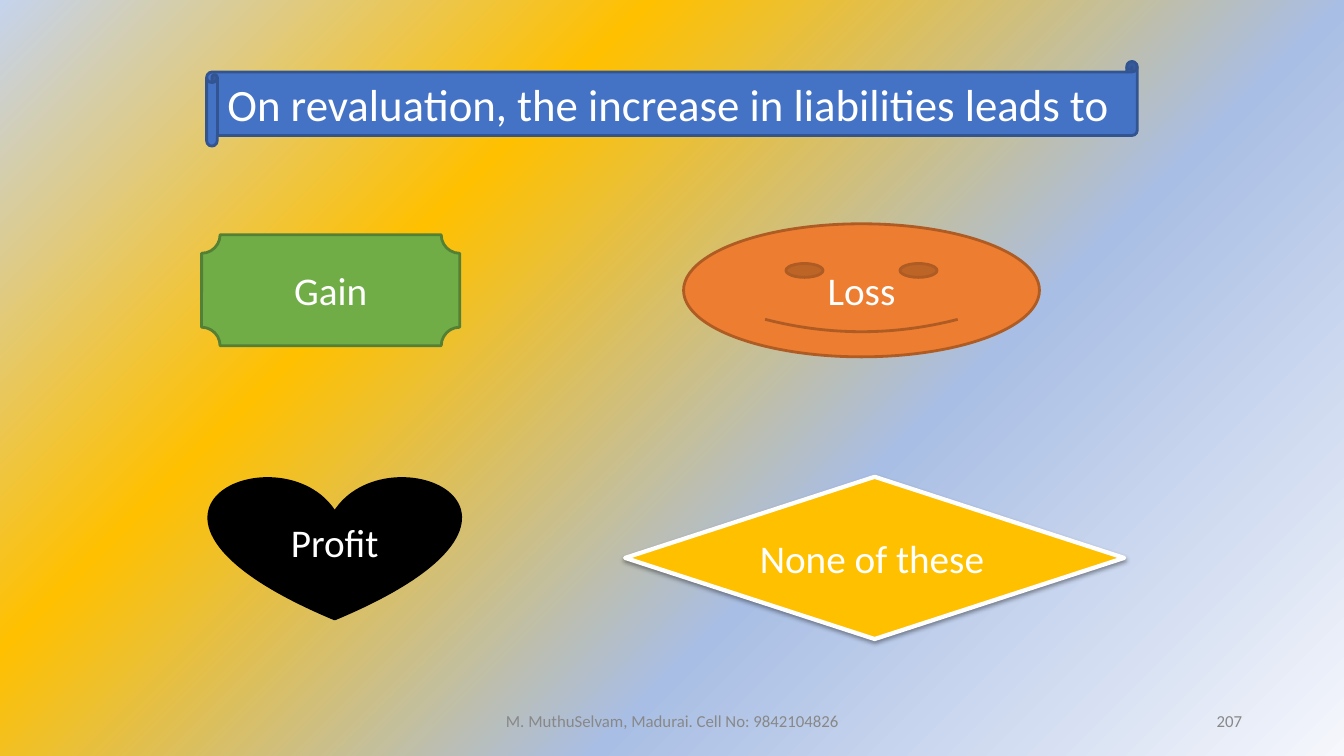
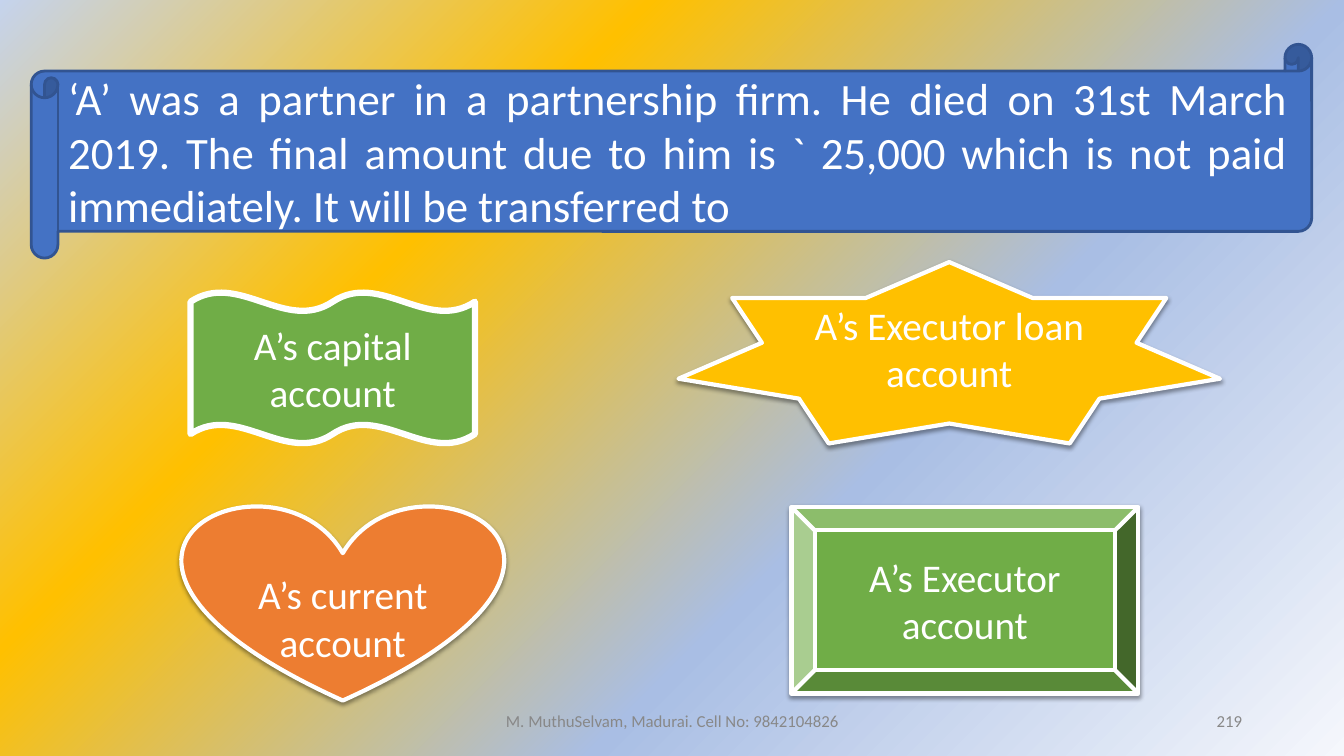
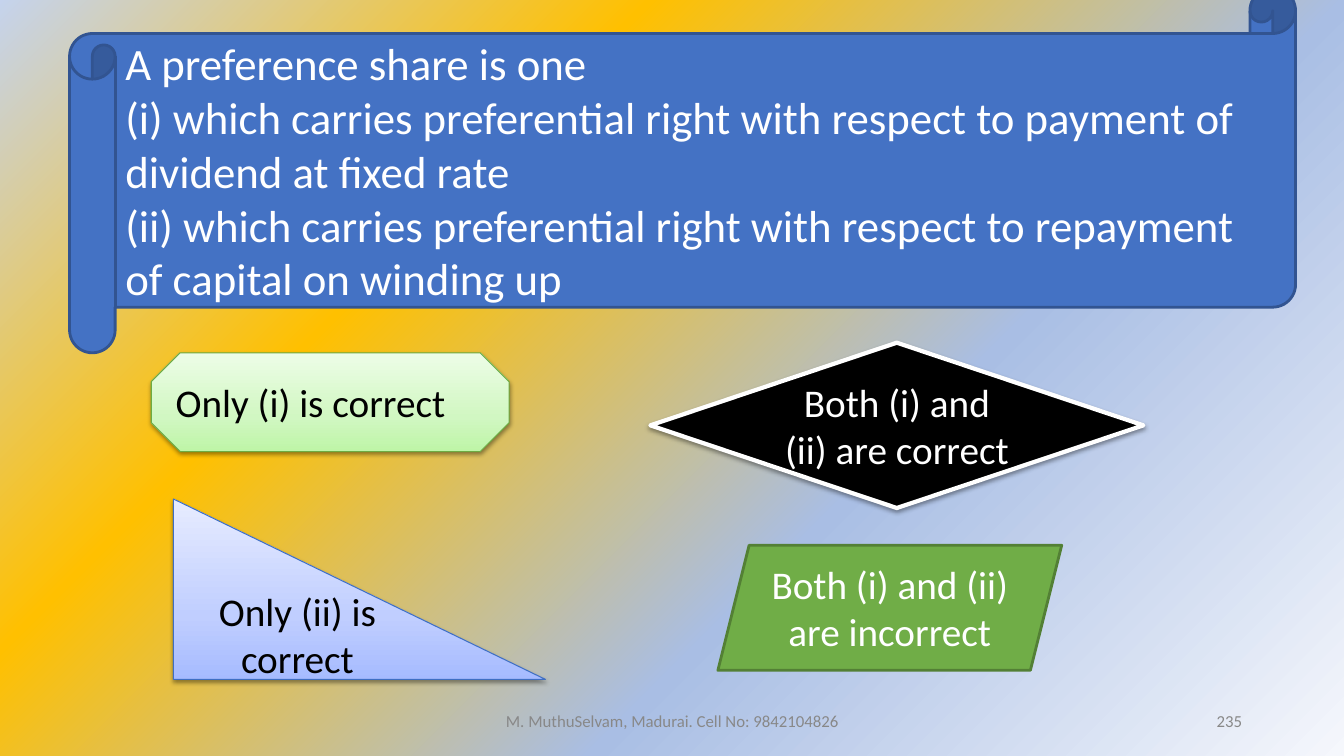
from collections import namedtuple

from lxml import etree
from pptx import Presentation
from pptx.dml.color import RGBColor
from pptx.enum.shapes import MSO_SHAPE
from pptx.enum.text import MSO_ANCHOR, MSO_AUTO_SIZE, PP_ALIGN
from pptx.oxml.ns import nsdecls, qn
from pptx.util import Inches, Pt

SCROLL = MSO_SHAPE.HORIZONTAL_SCROLL
PLAQUE = MSO_SHAPE.PLAQUE
SMILEY = MSO_SHAPE.SMILEY_FACE
HEART = MSO_SHAPE.HEART
DIAMOND = MSO_SHAPE.DIAMOND
STAR = MSO_SHAPE.STAR_7_POINT
BEVEL = MSO_SHAPE.BEVEL
WAVE = MSO_SHAPE.DOUBLE_WAVE
OCTAGON = MSO_SHAPE.OCTAGON
TRIANGLE = MSO_SHAPE.RIGHT_TRIANGLE
PARALLELOGRAM = MSO_SHAPE.PARALLELOGRAM
LEFT, CENTER, RIGHT, JUSTIFY = PP_ALIGN.LEFT, PP_ALIGN.CENTER, PP_ALIGN.RIGHT, PP_ALIGN.JUSTIFY
MIDDLE = MSO_ANCHOR.MIDDLE
NO_FIT = MSO_AUTO_SIZE.NONE

WHITE = RGBColor(0xFF, 0xFF, 0xFF)
BLACK = RGBColor(0, 0, 0)
GRAY = RGBColor(0x88, 0x88, 0x88)
BLUE = RGBColor(0x44, 0x72, 0xC4)
DARK_BLUE = RGBColor(0x32, 0x54, 0x91)
MID_BLUE = RGBColor(0x3F, 0x6F, 0xC3)
GREEN = RGBColor(0x70, 0xAD, 0x47)
DARK_GREEN = RGBColor(0x53, 0x80, 0x35)
MID_GREEN = RGBColor(0x6D, 0xAC, 0x43)
ORANGE = RGBColor(0xED, 0x7D, 0x31)
DARK_ORANGE = RGBColor(0xAF, 0x5C, 0x24)
GOLD = RGBColor(0xFF, 0xC0, 0x00)

BACKDROP = ((0, RGBColor(0xF5, 0xF7, 0xFC)), (36, RGBColor(0xA9, 0xBE, 0xE4)),
            (69, GOLD), (100, RGBColor(0xC5, 0xD3, 0xED)))
PALE_GREEN = ((0, RGBColor(0xBE, 0xF5, 0xA7)), (35, RGBColor(0xD1, 0xF7, 0xC2)),
              (100, RGBColor(0xED, 0xFD, 0xE7)))
PALE_BLUE = ((0, RGBColor(0xA6, 0xBB, 0xFF)), (35, RGBColor(0xC0, 0xCE, 0xFF)),
             (100, RGBColor(0xE7, 0xEC, 0xFF)))
UPWARD = '<a:lin ang="16200000" scaled="1"/>'
FROM_CORNER = ('<a:path path="circle"><a:fillToRect l="100000" t="100000"/></a:path>'
               '<a:tileRect r="-100000" b="-100000"/>')

FONT = "Calibri"
FOOTER = "M. MuthuSelvam, Madurai. Cell No: 9842104826"
SCROLL_CURL = 0.125
SIDE_INSET = 0.1
EDGE_INSET = 0.05

Style = namedtuple("Style", "fill line width shadow ink")
BANNER = Style(BLUE, DARK_BLUE, 2, False, WHITE)
GREEN_FLAT = Style(GREEN, DARK_GREEN, 2, False, WHITE)
ORANGE_FLAT = Style(ORANGE, DARK_ORANGE, 2, False, WHITE)
BLACK_FLAT = Style(BLACK, BLACK, 2, False, WHITE)
GREEN_FRAMED = Style(GREEN, WHITE, 4.5, False, WHITE)
GOLD_RAISED = Style(GOLD, WHITE, 3, True, WHITE)
ORANGE_RAISED = Style(ORANGE, WHITE, 3, True, WHITE)
GREEN_RAISED = Style(GREEN, WHITE, 3, True, WHITE)
BLACK_RAISED = Style(BLACK, WHITE, 3, True, WHITE)
GREEN_SUBTLE = Style(PALE_GREEN, MID_GREEN, 0.75, True, BLACK)
BLUE_SUBTLE = Style(PALE_BLUE, MID_BLUE, 0.75, True, BLACK)

Answer = namedtuple("Answer", "kind at style text align drop", defaults=(CENTER, 0))
Question = namedtuple("Question", "number at lines align answers")

QUESTIONS = (
    Question("207", (2.05, 0.61, 9.23, 0.84),
             ("On revaluation, the increase in liabilities leads to",), LEFT, (
                 Answer(PLAQUE, (2, 2.33, 2.56, 1.1), GREEN_FLAT, "Gain"),
                 Answer(SMILEY, (6.78, 2.22, 3.53, 1.32), ORANGE_FLAT, "Loss"),
                 Answer(HEART, (2.08, 4.73, 2.48, 1.41), BLACK_FLAT, "Profit"),
                 Answer(DIAMOND, (6.2, 4.73, 4.95, 1.61), GOLD_RAISED, "None of these", LEFT),
             )),
    Question("219", (0.31, 0.44, 12.7, 2.12),
             ("‘A’ was a partner in a partnership firm. He died on 31st March 2019. "
              "The final amount due to him is ` 25,000 which is not paid immediately. "
              "It will be transferred to",), JUSTIFY, (
                 Answer(HEART, (1.81, 5, 3.18, 1.95), ORANGE_RAISED,
                        "A’s current account", drop=0.47),
                 Answer(STAR, (6.73, 2.6, 5.37, 1.8), GOLD_RAISED, "A’s Executor loan account"),
                 Answer(BEVEL, (7.85, 5.03, 3.44, 1.85), GREEN_RAISED, "A’s Executor account"),
                 Answer(WAVE, (1.89, 2.9, 2.82, 1.5), GREEN_FRAMED, "A’s capital account"),
             )),
    Question("235", (0.69, -0.12, 12.16, 3.62),
             ("A preference share is one",
              "(i) which carries preferential right with respect to payment of "
              "dividend at fixed rate",
              "(ii) which carries preferential right with respect to repayment "
              "of capital on winding up"), LEFT, (
                 Answer(OCTAGON, (1.5, 3.5, 3.55, 0.98), GREEN_SUBTLE,
                        "Only (i) is correct", LEFT),
                 Answer(DIAMOND, (6.45, 3.4, 4.89, 1.64), BLACK_RAISED,
                        "Both (i) and (ii) are correct"),
                 Answer(TRIANGLE, (1.72, 4.95, 3.69, 1.79), BLUE_SUBTLE,
                        "Only (ii) is correct"),
                 Answer(PARALLELOGRAM, (7.12, 5.41, 3.41, 1.24), GREEN_FLAT,
                        "Both (i) and (ii) are incorrect"),
             )),
)


def paint_gradient(fill, owner, stops, shade):
    fill.gradient()
    marks = "".join(f'<a:gs pos="{place * 1000}"><a:srgbClr val="{color}"/></a:gs>'
                    for place, color in stops)
    gradient = etree.fromstring(f'<a:gradFill {nsdecls("a")} rotWithShape="1">'
                                f'<a:gsLst>{marks}</a:gsLst>{shade}</a:gradFill>')
    plain = owner.find(".//" + qn("a:gradFill"))
    plain.getparent().replace(plain, gradient)


def add_shadow(shape):
    effects = shape.element.spPr.find(qn("a:effectLst"))
    effects.append(etree.fromstring(
        f'<a:outerShdw {nsdecls("a")} blurRad="40000" dist="20000" dir="5400000" '
        'rotWithShape="0"><a:srgbClr val="000000"><a:alpha val="38000"/></a:srgbClr>'
        '</a:outerShdw>'))


def write(box, lines, size, color, align, top=EDGE_INSET, bottom=EDGE_INSET):
    frame = box.text_frame
    frame.word_wrap = True
    frame.auto_size = NO_FIT
    frame.vertical_anchor = MIDDLE
    frame.margin_left = frame.margin_right = Inches(SIDE_INSET)
    frame.margin_top, frame.margin_bottom = Inches(top), Inches(bottom)
    for index, line in enumerate(lines):
        para = frame.add_paragraph() if index else frame.paragraphs[0]
        para.alignment = align
        span = para.add_run()
        span.text = line
        span.font.name = FONT
        span.font.size = Pt(size)
        span.font.color.rgb = color


def add_figure(page, kind, at, style):
    shape = page.shapes.add_shape(kind, *map(Inches, at))
    shape.shadow.inherit = False
    if isinstance(style.fill, RGBColor):
        shape.fill.solid()
        shape.fill.fore_color.rgb = style.fill
    else:
        paint_gradient(shape.fill, shape.element.spPr, style.fill, UPWARD)
    shape.line.color.rgb = style.line
    shape.line.width = Pt(style.width)
    if style.shadow:
        add_shadow(shape)
    return shape


def add_banner(page, question):
    left, top, width, height = question.at
    scroll = add_figure(page, SCROLL, question.at, BANNER)
    title = page.shapes.title
    title.element.addprevious(scroll.element)
    curl = height * SCROLL_CURL
    title.left, title.top = Inches(left + curl), Inches(top + curl)
    title.width, title.height = Inches(width - 1.5 * curl), Inches(height - 2 * curl)
    write(title, question.lines, 32, BANNER.ink, question.align, 0, 0)


def add_answer(page, answer):
    shape = add_figure(page, answer.kind, answer.at, answer.style)
    write(shape, (answer.text,), 28, answer.style.ink, answer.align, EDGE_INSET + answer.drop)


def add_footer(page, number):
    for text, left, width, align in ((FOOTER, 4.42, 4.5, CENTER), (number, 9.42, 3, RIGHT)):
        box = page.shapes.add_textbox(Inches(left), Inches(6.95), Inches(width), Inches(0.4))
        write(box, (text,), 12, GRAY, align)


def main():
    deck = Presentation()
    deck.slide_width, deck.slide_height = Inches(13.33), Inches(7.5)
    master = deck.slide_master
    paint_gradient(master.background.fill, master.element, BACKDROP, FROM_CORNER)
    title_only = deck.slide_layouts.get_by_name("Title Only")
    for question in QUESTIONS:
        page = deck.slides.add_slide(title_only)
        add_banner(page, question)
        for answer in question.answers:
            add_answer(page, answer)
        add_footer(page, question.number)
    deck.save("out.pptx")


if __name__ == "__main__":
    main()
